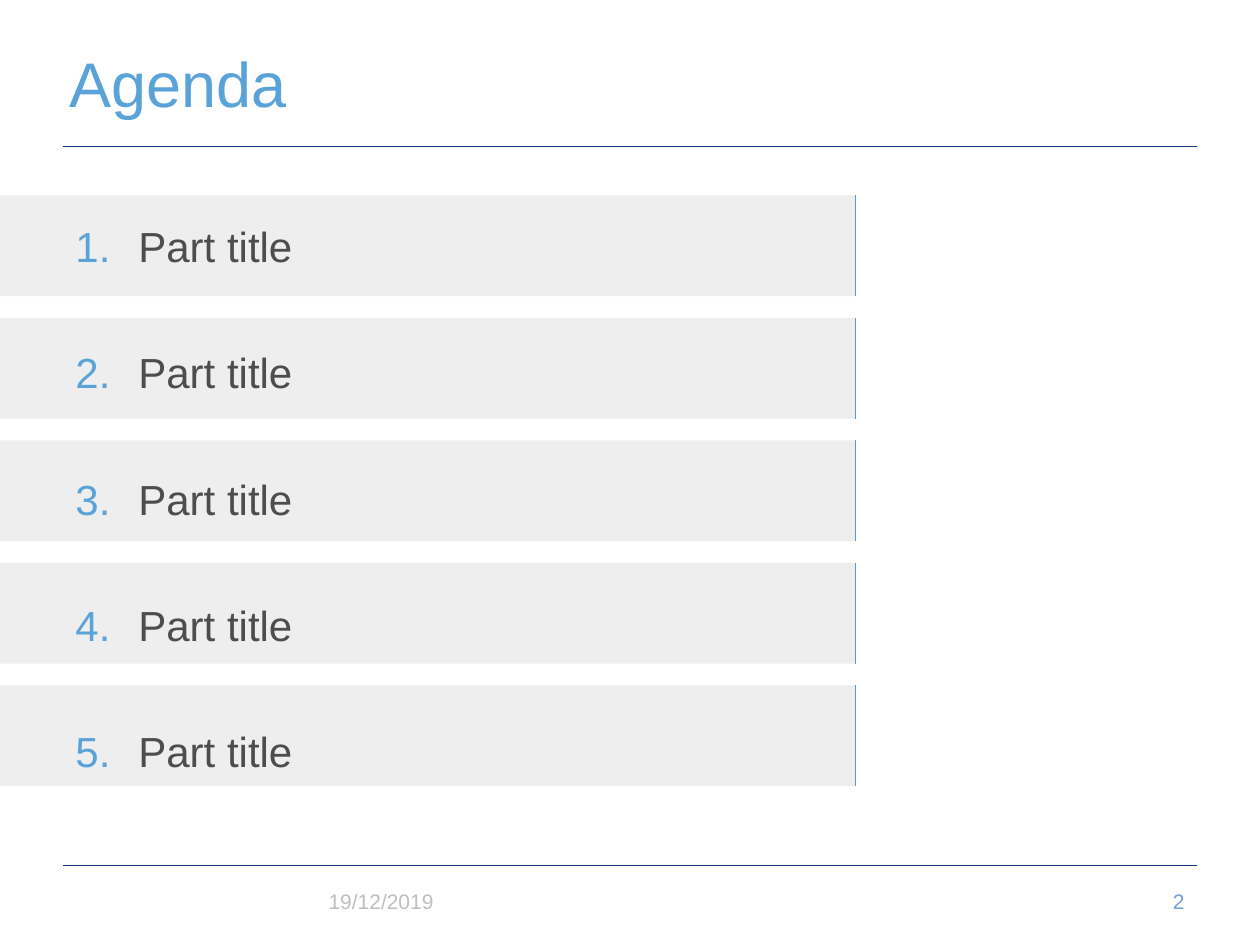
from lxml import etree
from pptx import Presentation
from pptx.dml.color import RGBColor
from pptx.enum import shapes, text
from pptx.oxml import ns
from pptx.util import Inches, Pt

FONT = "Arial"
SKY = RGBColor(0x5A, 0xA3, 0xD9)
NAVY = RGBColor(0x0C, 0x37, 0x7B)
EDGE_BLUE = RGBColor(0x56, 0x9B, 0xCE)
BAND_GREY = RGBColor(0xEE, 0xEE, 0xEE)
TEXT_GREY = RGBColor(0x4D, 0x4D, 0x4D)
DATE_GREY = RGBColor(0xBF, 0xBF, 0xBF)
PAGE_BLUE = RGBColor(0x72, 0x9F, 0xCF)

PARTS = ["Part title"] * 5
BAND_HEIGHT = 0.8
BAND_PITCH = 0.9725


def set_font(paragraph, size, color):
    paragraph.font.name = FONT
    paragraph.font.size = Pt(size)
    paragraph.font.color.rgb = color


def add_rule(slide, x1, y1, x2, y2, color, width):
    rule = slide.shapes.add_connector(
        shapes.MSO_CONNECTOR.STRAIGHT,
        Inches(x1), Inches(y1), Inches(x2), Inches(y2))
    rule.line.color.rgb = color
    rule.line.width = Pt(width)
    etree.SubElement(rule._element.spPr, ns.qn("a:effectLst"))


def add_label(slide, left, top, width, height, wording, color, alignment):
    label = slide.shapes.add_textbox(
        Inches(left), Inches(top), Inches(width), Inches(height))
    frame = label.text_frame
    frame.word_wrap = True
    frame.vertical_anchor = text.MSO_ANCHOR.MIDDLE
    paragraph = frame.paragraphs[0]
    paragraph.text = wording
    paragraph.alignment = alignment
    set_font(paragraph, 12, color)


def add_header(slide, left, top, width, height):
    title = slide.shapes.title
    title.left, title.top = Inches(left), Inches(top)
    title.width, title.height = Inches(width), Inches(height)
    frame = title.text_frame
    frame.margin_left = frame.margin_right = Inches(0.05)
    frame.margin_top = frame.margin_bottom = Inches(0.05)
    frame.vertical_anchor = text.MSO_ANCHOR.MIDDLE
    paragraph = frame.paragraphs[0]
    paragraph.text = "Agenda"
    paragraph.alignment = text.PP_ALIGN.LEFT
    set_font(paragraph, 36, SKY)
    rule_y = top + height + 0.12
    add_rule(slide, left, rule_y, left + width, rule_y, NAVY, 0.5)


def add_footer(slide, left, top, width, height):
    right = left + width
    add_rule(slide, left, top, right, top, NAVY, 0.5)
    label_top = top + 0.08
    label_height = height - 0.08
    add_label(slide, left + 2.01, label_top, 1.5, label_height,
              "19/12/2019", DATE_GREY, text.PP_ALIGN.LEFT)
    add_label(slide, right - 0.8, label_top, 0.8, label_height,
              "2", PAGE_BLUE, text.PP_ALIGN.RIGHT)


def add_bands(slide, left, top, width):
    right = left + width
    for index in range(len(PARTS)):
        band_top = top + index * BAND_PITCH
        band = slide.shapes.add_shape(
            shapes.MSO_SHAPE.RECTANGLE, Inches(left), Inches(band_top),
            Inches(width), Inches(BAND_HEIGHT))
        band.shadow.inherit = False
        band.fill.solid()
        band.fill.fore_color.rgb = BAND_GREY
        band.line.fill.background()
        add_rule(slide, right, band_top, right, band_top + BAND_HEIGHT,
                 EDGE_BLUE, 0.75)


def number_paragraph(paragraph):
    properties = paragraph._p.get_or_add_pPr()
    properties.set("marL", str(Inches(0.5)))
    properties.set("indent", str(Inches(-0.5)))
    bullet_color = etree.SubElement(properties, ns.qn("a:buClr"))
    etree.SubElement(bullet_color, ns.qn("a:srgbClr"), val=str(SKY))
    etree.SubElement(properties, ns.qn("a:buFont"), typeface=FONT)
    etree.SubElement(properties, ns.qn("a:buAutoNum"), type="arabicPeriod")


def add_agenda(slide, left, top, width, height):
    agenda = slide.shapes.add_textbox(
        Inches(left), Inches(top), Inches(width), Inches(height))
    frame = agenda.text_frame
    frame.word_wrap = True
    for index, part in enumerate(PARTS):
        paragraph = frame.add_paragraph() if index else frame.paragraphs[0]
        paragraph.text = part
        number_paragraph(paragraph)
        paragraph.line_spacing = 1.05
        paragraph.space_after = Pt(42)
        set_font(paragraph, 24, TEXT_GREY)


def main():
    deck = Presentation()
    deck.slide_width, deck.slide_height = Inches(10), Inches(7.5)
    slide = deck.slides.add_slide(deck.slide_layouts[5])
    add_header(slide, 0.5, 0.26, 9, 0.78)
    add_footer(slide, 0.5, 6.87, 9, 0.48)
    add_bands(slide, 0, 1.55, 6.79)
    add_agenda(slide, 0.5, 1.68, 5.82, 4.48)
    deck.save("out.pptx")


if __name__ == "__main__":
    main()
